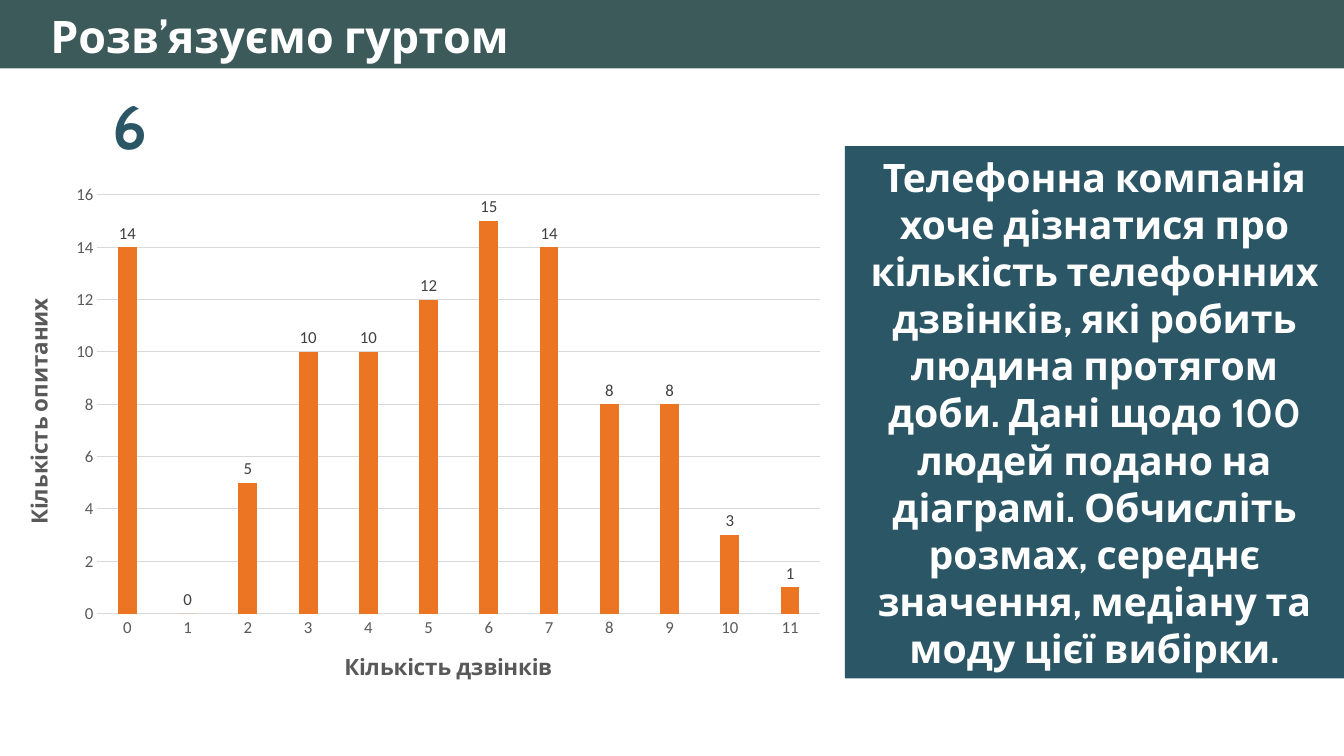
"""Builds a slide with a bar chart of phone calls and a statistics task."""
from pptx import Presentation
from pptx import util as u
from pptx.chart.data import CategoryChartData
from pptx.dml.color import RGBColor
from pptx.enum import chart as ch, shapes, text

TITLE = "Розв’язуємо гуртом"
NUMBER = "6"
TASK = ("Телефонна компанія хоче дізнатися про кількість телефонних дзвінків, "
        "які робить людина протягом доби. Дані щодо 100 людей подано на діаграмі. "
        "Обчисліть розмах, середнє значення, медіану та моду цієї вибірки.")
X_TITLE, Y_TITLE = "Кількість дзвінків", "Кількість опитаних"
ANSWERS = [14, 0, 5, 10, 10, 12, 15, 14, 8, 8, 3, 1]
GREEN, TEAL, ORANGE = "3C5A59", "2B5666", "EC7524"
WHITE, GREY, DARK, PALE = "FFFFFF", "595959", "404040", "D9D9D9"
W, H = 13.33, 7.5


def rgb(value):
    return RGBColor.from_string(value)


def style(font, size, color, name="Calibri", bold=False):
    font.size, font.name, font.bold = u.Pt(size), name, bold
    font.color.rgb = rgb(color)


def write(tf, words, size, color, align=text.PP_ALIGN.CENTER,
          anchor=text.MSO_ANCHOR.TOP):
    tf.word_wrap = True
    tf.vertical_anchor = anchor
    p = tf.paragraphs[0]
    p.alignment = align
    r = p.add_run()
    r.text = words
    style(r.font, size, color, "Cabin", True)


def add_box(s, box, fill):
    sp = s.shapes.add_shape(shapes.MSO_SHAPE.RECTANGLE, *map(u.Inches, box))
    sp.shadow.inherit = False
    sp.fill.solid()
    sp.fill.fore_color.rgb = rgb(fill)
    sp.line.fill.background()
    return sp


def add_label(s, box, words, size, color, **fmt):
    sp = s.shapes.add_textbox(*map(u.Inches, box))
    write(sp.text_frame, words, size, color, **fmt)


def format_axis(axis, title):
    axis.major_tick_mark = axis.minor_tick_mark = ch.XL_TICK_MARK.NONE
    style(axis.tick_labels.font, 12, GREY)
    tf = axis.axis_title.text_frame
    tf.text = title
    style(tf.paragraphs[0].runs[0].font, 16, GREY, "Cabin", True)


def format_line(line):
    line.color.rgb = rgb(PALE)
    line.width = u.Pt(0.75)


def add_calls_chart(s, box):
    data = CategoryChartData()
    data.categories = [str(i) for i in range(len(ANSWERS))]
    data.add_series("Series 1", ANSWERS)
    chart = s.shapes.add_chart(ch.XL_CHART_TYPE.COLUMN_CLUSTERED,
                               *map(u.Inches, box), data).chart
    chart.has_legend = chart.has_title = False
    style(chart.font, 10, "000000")
    format_axis(chart.category_axis, X_TITLE)
    format_line(chart.category_axis.format.line)
    values = chart.value_axis
    format_axis(values, Y_TITLE)
    values.minimum_scale, values.maximum_scale, values.major_unit = 0, 16, 2
    values.format.line.fill.background()
    format_line(values.major_gridlines.format.line)
    plot = chart.plots[0]
    plot.gap_width, plot.overlap, plot.vary_by_categories = 219, -27, False
    fill = plot.series[0].format.fill
    fill.solid()
    fill.fore_color.rgb = rgb(ORANGE)
    labels = plot.series[0].data_labels
    labels.show_value = True
    labels.position = ch.XL_LABEL_POSITION.OUTSIDE_END
    style(labels.font, 12, DARK)


def main():
    prs = Presentation()
    prs.slide_width, prs.slide_height = u.Inches(W), u.Inches(H)
    s = prs.slides.add_slide(prs.slide_layouts[6])
    add_box(s, (0, 0, W, 0.68), GREEN)
    add_label(s, (0.4, 0.04, 12.38, 0.64), TITLE, 32, WHITE,
              align=text.PP_ALIGN.LEFT)
    add_label(s, (0.77, 0.82, 1.03, 0.84), NUMBER, 44, TEAL)
    task = add_box(s, (8.38, 1.45, W - 8.38, 5.28), TEAL)
    write(task.text_frame, TASK, 28, WHITE, anchor=text.MSO_ANCHOR.MIDDLE)
    add_calls_chart(s, (0.02, 1.73, 8.28, 5.26))
    prs.save("out.pptx")


if __name__ == "__main__":
    main()
